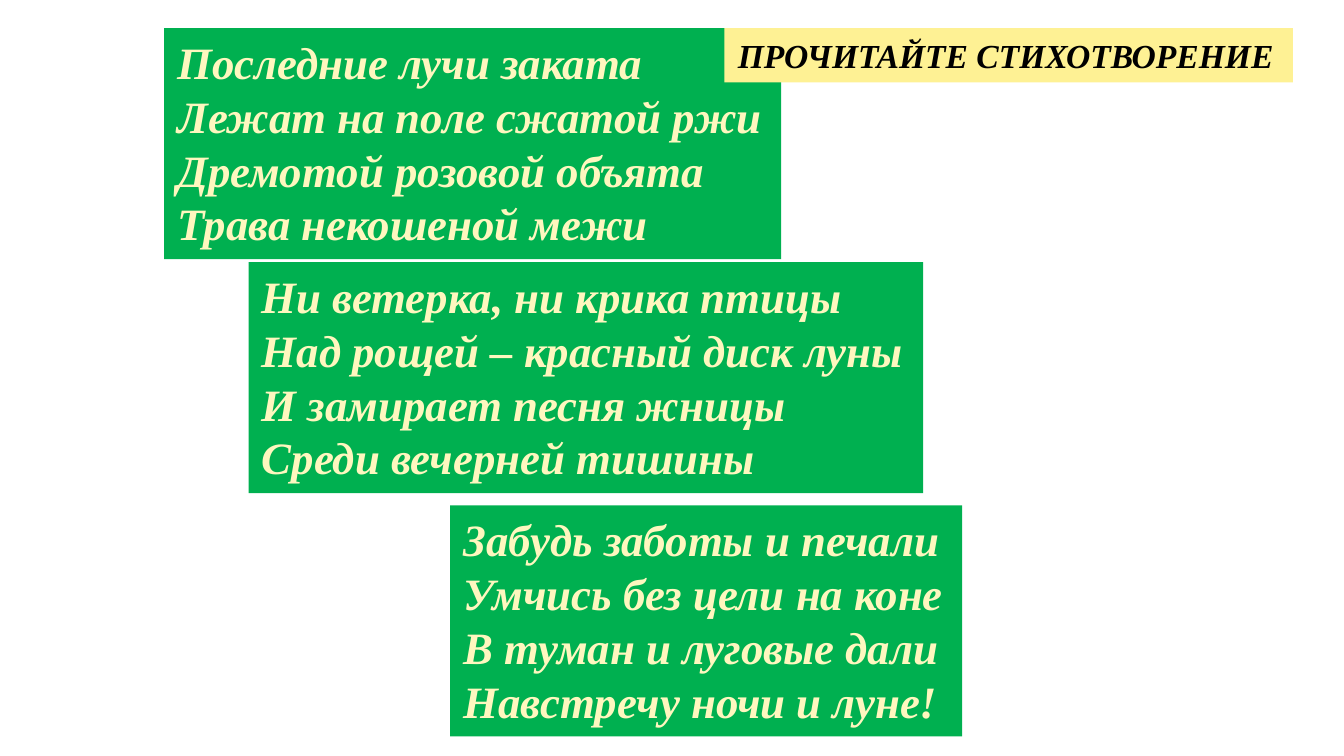
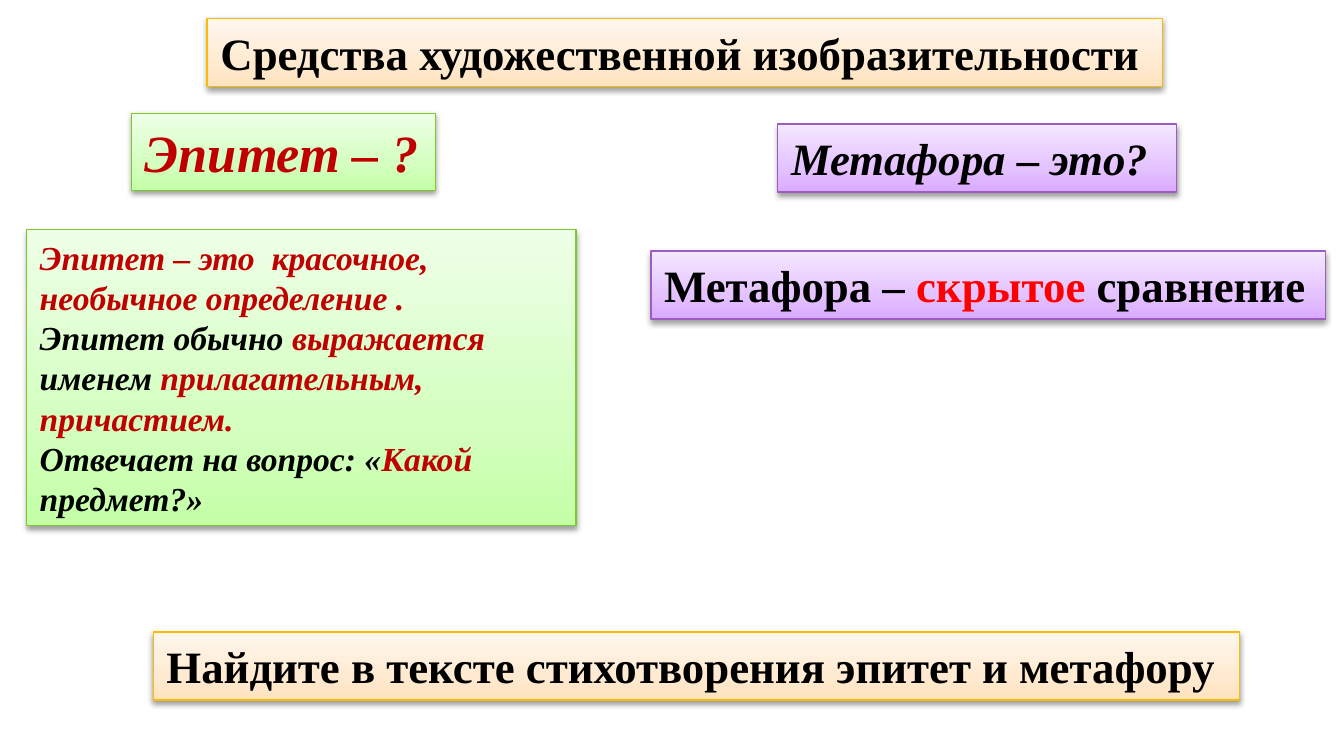
from copy import deepcopy

from lxml import etree
from pptx import Presentation
from pptx.dml.color import RGBColor
from pptx.enum import text
from pptx.oxml import ns
from pptx.util import Pt

FONT = "Times New Roman"
BLACK, RED, BRIGHT_RED = "000000", "C00000", "FF0000"
GREEN, CREAM, YELLOW = "00B050", "FEF7BF", "FEF194"
ORANGE_THEME = ("F9BC00", ("FFE2BD", "FFEAD1", "FFF7EE"))
GREEN_THEME = ("7ACB29", ("C4FFA7", "D4FFC0", "EEFFE7"))
PURPLE_THEME = ("9D5CC1", ("DAAAFF", "E4C2FF", "F4E8FF"))
STOP_POSITIONS = (0, 0.35, 1)
FIXED = text.MSO_AUTO_SIZE.NONE
GROWING = text.MSO_AUTO_SIZE.SHAPE_TO_FIT_TEXT

STANZAS = [
    ((88, 15.1, 330.5, 123.8), [
        "Последние лучи заката",
        "Лежат на поле сжатой ржи",
        "Дремотой розовой объята",
        "Трава некошеной межи"]),
    ((133.2, 140.4, 361.4, 123.8), [
        "Ни ветерка, ни крика птицы",
        "Над рощей – красный диск луны",
        "И замирает песня жницы",
        "Среди вечерней тишины"]),
    ((241.2, 270.7, 274.3, 123.8), [
        "Забудь заботы и печали",
        "Умчись без цели на коне",
        "В туман и луговые дали",
        "Навстречу ночи и луне!"]),
]

EPITHET_DEFINITION = [
    [("Эпитет – это  красочное, необычное определение .", RED)],
    [("Эпитет обычно ", BLACK), ("выражается", RED), (" именем ", BLACK),
     ("прилагательным, причастием.", RED)],
    [("Отвечает на вопрос: «", BLACK), ("Какой", RED), (" предмет?»", BLACK)],
]


def rgb(color):
    return RGBColor.from_string(color)


def place(shape, box):
    shape.left, shape.top, shape.width, shape.height = map(Pt, box)


def write(shape, paragraphs, size, italic=True, wrap=False, sizing=GROWING):
    frame = shape.text_frame
    frame.word_wrap = wrap
    frame.auto_size = sizing
    frame.vertical_anchor = text.MSO_ANCHOR.TOP
    for index, runs in enumerate(paragraphs):
        paragraph = frame.add_paragraph() if index else frame.paragraphs[0]
        paragraph.alignment = text.PP_ALIGN.LEFT
        for words, color in runs:
            run = paragraph.add_run()
            run.text = words
            font = run.font
            font.name, font.size = FONT, Pt(size)
            font.bold, font.italic = True, italic
            font.color.rgb = rgb(color)


def paint_flat(shape, color):
    shape.fill.solid()
    shape.fill.fore_color.rgb = rgb(color)


def add_soft_shadow(shape):
    effects = etree.SubElement(shape.element.spPr, ns.qn("a:effectLst"))
    shadow = etree.SubElement(
        effects, ns.qn("a:outerShdw"), blurRad=str(Pt(3.1)),
        dist=str(Pt(1.6)), dir="5400000", rotWithShape="0")
    color = etree.SubElement(shadow, ns.qn("a:srgbClr"), val=BLACK)
    etree.SubElement(color, ns.qn("a:alpha"), val="38000")


def paint_theme(shape, theme):
    outline, colors = theme
    shape.fill.gradient()
    shape.fill.gradient_angle = 90
    stop_list = shape.element.spPr.find(".//" + ns.qn("a:gsLst"))
    stop_list.append(deepcopy(stop_list[0]))
    for stop, color, position in zip(shape.fill.gradient_stops, colors, STOP_POSITIONS):
        stop.color.rgb = rgb(color)
        stop.position = position
    shape.line.color.rgb = rgb(outline)
    shape.line.width = Pt(0.75)
    add_soft_shadow(shape)


def add_title(slide, box, words, size, italic):
    title = slide.shapes.title
    place(title, box)
    write(title, [[(words, BLACK)]], size, italic, wrap=True, sizing=FIXED)
    return title


def add_stanza(slide, box, lines):
    stanza = slide.shapes.add_textbox(*map(Pt, box))
    paint_flat(stanza, GREEN)
    write(stanza, [[(line, CREAM)] for line in lines], 24)


def add_card(slide, box, theme, paragraphs, size=24, italic=True, wrap=False):
    card = slide.shapes.add_textbox(*map(Pt, box))
    paint_theme(card, theme)
    write(card, paragraphs, size, italic, wrap)


def build_poem(slide):
    for box, lines in STANZAS:
        add_stanza(slide, box, lines)
    title = add_title(slide, (388.1, 15.1, 304.6, 29.1),
                      "ПРОЧИТАЙТЕ СТИХОТВОРЕНИЕ", 18, True)
    paint_flat(title, YELLOW)
    title.element.getparent().append(title.element)


def build_devices(slide):
    title = add_title(slide, (110.9, 9.9, 511.9, 36.4),
                      "Средства художественной изобразительности", 24, False)
    paint_theme(title, ORANGE_THEME)
    add_card(slide, (82.1, 338.7, 581.8, 36.4), ORANGE_THEME,
             [[("Найдите в тексте стихотворения эпитет и метафору", BLACK)]], italic=False)
    add_card(slide, (70.6, 60.8, 162.7, 41.2), GREEN_THEME,
             [[("Эпитет – ?", RED)]], size=28)
    add_card(slide, (14.2, 123.1, 294.5, 158.6), GREEN_THEME,
             EPITHET_DEFINITION, size=18, wrap=True)
    add_card(slide, (416.7, 66.5, 213.8, 36.4), PURPLE_THEME,
             [[("Метафора – это?", BLACK)]])
    add_card(slide, (348.7, 134.5, 361.4, 36.4), PURPLE_THEME,
             [[("Метафора – ", BLACK), ("скрытое", BRIGHT_RED), (" сравнение", BLACK)]],
             italic=False)


def main():
    presentation = Presentation()
    presentation.slide_width, presentation.slide_height = Pt(720), Pt(405)
    title_only = presentation.slide_layouts[5]
    for build in (build_poem, build_devices):
        build(presentation.slides.add_slide(title_only))
    presentation.save("out.pptx")


if __name__ == "__main__":
    main()
